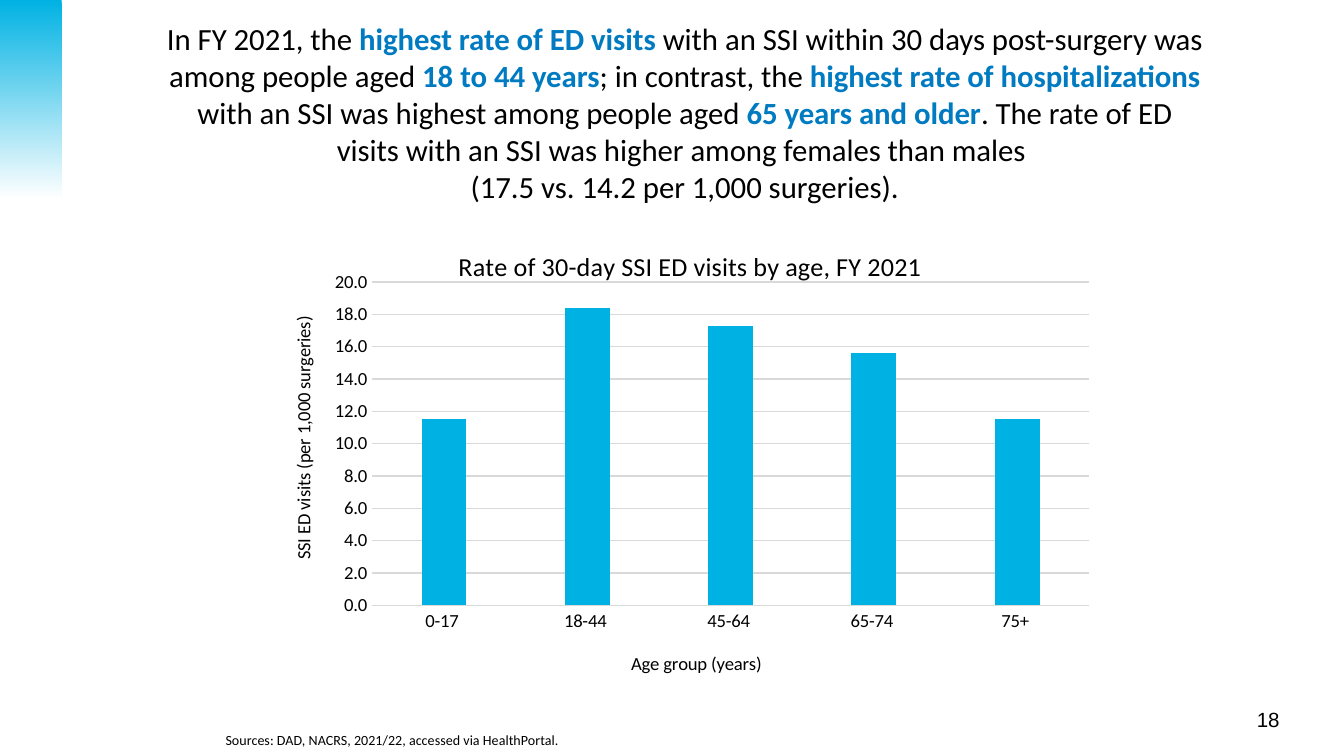
from pptx import Presentation
from pptx.chart.data import CategoryChartData
from pptx.dml.color import RGBColor
from pptx.enum.chart import XL_CHART_TYPE, XL_TICK_MARK
from pptx.enum.shapes import MSO_SHAPE
from pptx.enum.text import MSO_ANCHOR, PP_ALIGN
from pptx.oxml import parse_xml
from pptx.oxml.ns import nsdecls, qn
from pptx.util import Inches, Pt

BLACK, BLUE, CYAN, GRAY, WHITE = "000000", "007BC1", "00B2E3", "D9D9D9", "FFFFFF"

# Message pieces: text and whether it is emphasised
MESSAGE = [
    ("In FY 2021, the ", False),
    ("highest rate of ED visits ", True),
    ("with an SSI within 30 days post-surgery was among people aged ", False),
    ("18 to 44 years", True),
    ("; in contrast, the ", False),
    ("highest rate of hospitalizations ", True),
    ("with an SSI was highest among people aged ", False),
    ("65 years and older", True),
    (". The rate of ED visits with an SSI was higher among females than males ", False),
]
RATES = {"0-17 ": 11.5, "18-44 ": 18.4, "45-64 ": 17.3, "65-74 ": 15.6, "75+ ": 11.5}


def color(hex_string):
    return RGBColor.from_string(hex_string)


def style_font(font, size, name="Calibri"):
    font.size = Pt(size)
    font.name = name
    font.bold = False
    font.color.rgb = color(BLACK)


def add_text(page, left, top, width, height, size, text="", name="Calibri",
             align=PP_ALIGN.LEFT):
    box = page.shapes.add_textbox(Inches(left), Inches(top), Inches(width), Inches(height))
    frame = box.text_frame
    frame.word_wrap = True
    frame.vertical_anchor = MSO_ANCHOR.MIDDLE
    para = frame.paragraphs[0]
    para.text = text
    para.alignment = align
    style_font(para.font, size, name)
    return box


def add_message(page):
    box = add_text(page, 1.16, 0.11, 7.87, 1.46, 16.5, align=PP_ALIGN.CENTER)
    frame = box.text_frame
    frame.vertical_anchor = MSO_ANCHOR.TOP
    frame.margin_left = frame.margin_right = Inches(0.07)
    frame.margin_top = frame.margin_bottom = Inches(0.04)
    para = frame.paragraphs[0]
    for text, emphasised in MESSAGE:
        span = para.add_run()
        span.text = text
        span.font.bold = emphasised
        span.font.color.rgb = color(BLUE if emphasised else BLACK)
    para.add_line_break()
    para.add_run().text = "(17.5 vs. 14.2 per 1,000 surgeries)."


def add_gradient_bar(page):
    bar = page.shapes.add_shape(MSO_SHAPE.RECTANGLE, 0, 0, Inches(0.46), Inches(1.48))
    bar.shadow.inherit = False
    bar.line.fill.background()
    bar.fill.gradient()
    bar.fill.gradient_angle = 270
    for stop, shade in zip(bar.fill.gradient_stops, (CYAN, WHITE)):
        stop.color.rgb = color(shade)


def layout_xml(x, y, size=None):
    values = [("xMode", "edge"), ("yMode", "edge"), ("x", x), ("y", y)]
    if size:
        values.insert(0, ("layoutTarget", "inner"))
        values += [("w", size[0]), ("h", size[1])]
    parts = "".join(f'<c:{tag} val="{value}"/>' for tag, value in values)
    return parse_xml(f'<c:layout {nsdecls("c")}><c:manualLayout>{parts}'
                     "</c:manualLayout></c:layout>")


def set_title(title, text, size, x, y):
    frame = title.text_frame
    frame.text = text
    style_font(frame.paragraphs[0].font, size)
    element = title._element
    for old in element.findall(qn("c:layout")):
        element.remove(old)
    element.find(qn("c:tx")).addnext(layout_xml(x, y))


def style_axis(axis, title, x, y):
    axis.major_tick_mark = axis.minor_tick_mark = XL_TICK_MARK.NONE
    style_font(axis.tick_labels.font, 10)
    set_title(axis.axis_title, title, 10, x, y)


def style_line(line):
    line.color.rgb = color(GRAY)
    line.width = Pt(0.75)


def add_rate_chart(page):
    data = CategoryChartData(number_format="0.0")
    data.categories = list(RATES)
    data.add_series("Series 1", list(RATES.values()))
    chart = page.shapes.add_chart(XL_CHART_TYPE.COLUMN_CLUSTERED, Inches(2.08), Inches(1.68),
                                  Inches(6.17), Inches(3.38), data).chart
    style_font(chart.font, 10)
    chart.has_legend = False
    set_title(chart.chart_title, "Rate of 30-day SSI ED visits by age, FY 2021", 14, 0.21, 0.04)

    # Columns
    plot = chart.plots[0]
    plot.vary_by_categories = False
    plot.gap_width = 219
    plot.overlap = -27
    fill = plot.series[0].format.fill
    fill.solid()
    fill.fore_color.rgb = color(CYAN)

    # Axes
    ages, rates = chart.category_axis, chart.value_axis
    style_axis(ages, "Age group (years)", 0.42, 0.94)
    style_line(ages.format.line)
    style_axis(rates, "SSI ED visits (per 1,000 surgeries)", 0.01, 0.2)
    body = rates.axis_title._element.find(".//" + qn("a:bodyPr"))
    body.set("rot", "-5400000")
    body.set("vert", "horz")
    rates.format.line.fill.background()
    style_line(rates.major_gridlines.format.line)
    rates.minimum_scale, rates.maximum_scale, rates.major_unit = 0, 20, 2
    rates.tick_labels.number_format = "0.0"
    rates.tick_labels.number_format_is_linked = False

    # Plot area position
    area = chart._chartSpace.find(".//" + qn("c:plotArea"))
    for old in area.findall(qn("c:layout")):
        area.remove(old)
    area.insert(0, layout_xml(0.112, 0.125, (0.864, 0.72)))


def main():
    deck = Presentation()
    deck.slide_width, deck.slide_height = Inches(10), Inches(10 * 9 / 16)
    page = deck.slides.add_slide(deck.slide_layouts[6])
    add_text(page, 8.45, 5.21, 1.17, 0.29, 11, "18", "Arial", PP_ALIGN.RIGHT)
    add_gradient_bar(page)
    add_text(page, 1.58, 5.39, 6.67, 0.23, 7.5,
             "Sources: DAD, NACRS, 2021/22, accessed via HealthPortal.")
    add_message(page)
    add_rate_chart(page)
    deck.save("out.pptx")


if __name__ == "__main__":
    main()
